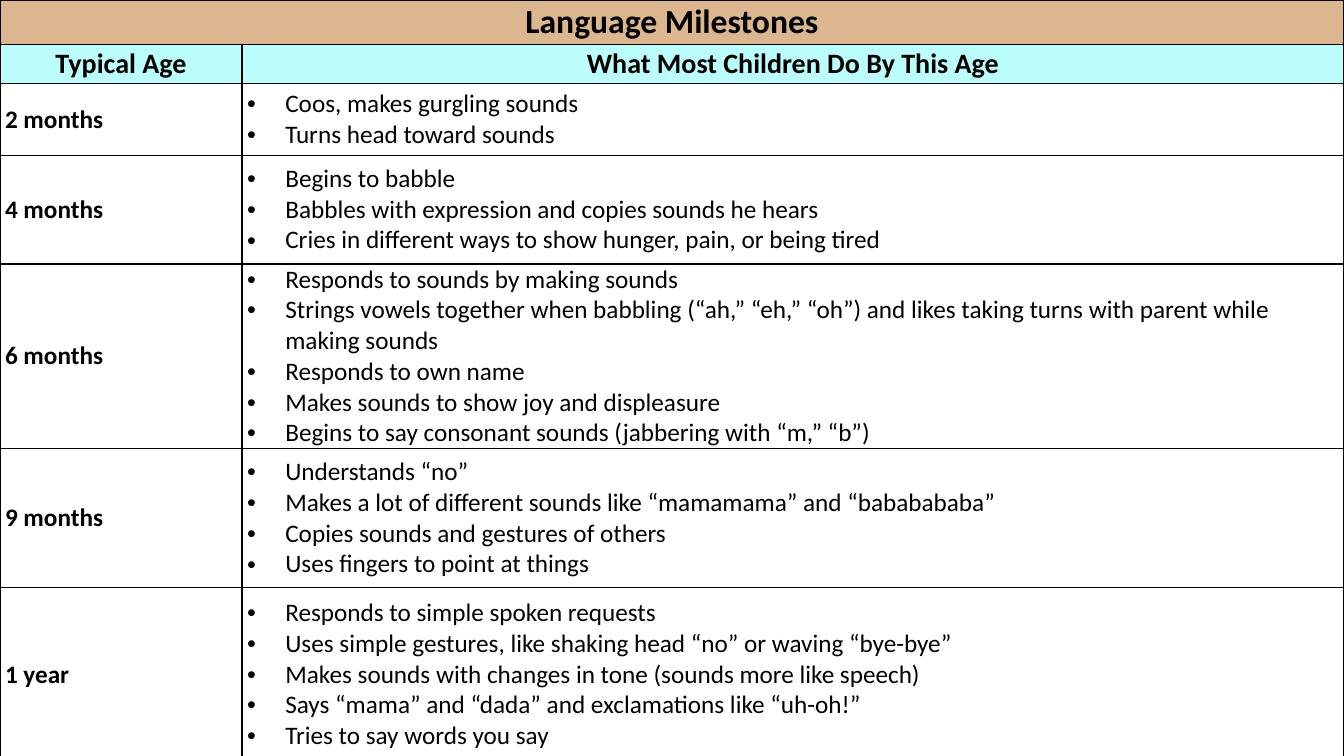
import pptx
import pptx.dml.color
import pptx.enum.text
import pptx.oxml
import pptx.oxml.ns
import pptx.util
from pptx.util import Inches

COLOURS = {"title": "DBB68F", "heading": "BBFDFB", "ink": "000000"}
FONT = "Calibri"
COLUMN_WIDTHS = [2.4, 10.93]
ROW_HEIGHTS = [0.44, 0.39, 0.71, 1.08, 1.77, 1.38, 1.72]

TITLE = "Language Milestones"
HEADINGS = ["Typical Age", "What Most Children Do By This Age"]
MILESTONES = [
    ("2 months", ["Coos, makes gurgling sounds", "Turns head toward sounds"]),
    ("4 months", [
        "Begins to babble",
        "Babbles with expression and copies sounds he hears",
        "Cries in different ways to show hunger, pain, or being tired",
    ]),
    ("6 months", [
        "Responds to sounds by making sounds",
        "Strings vowels together when babbling (“ah,” “eh,” “oh”) "
        "and likes taking turns with parent while making sounds",
        "Responds to own name",
        "Makes sounds to show joy and displeasure",
        "Begins to say consonant sounds (jabbering with “m,” “b”)",
    ]),
    ("9 months", [
        "Understands “no”",
        "Makes a lot of different sounds like “mamamama” and “bababababa”",
        "Copies sounds and gestures of others",
        "Uses fingers to point at things",
    ]),
    ("1 year", [
        "Responds to simple spoken requests",
        "Uses simple gestures, like shaking head “no” or waving “bye-bye”",
        "Makes sounds with changes in tone (sounds more like speech)",
        "Says “mama” and “dada” and exclamations like “uh-oh!”",
        "Tries to say words you say",
    ]),
]


def rgb(name):
    return pptx.dml.color.RGBColor.from_string(COLOURS[name])


def style_cell(cell, fill=None):
    """Set margins, thin borders and fill of one cell."""
    cell.margin_left = cell.margin_right = Inches(0.05)
    cell.margin_top = cell.margin_bottom = Inches(0)
    cell.vertical_anchor = pptx.enum.text.MSO_ANCHOR.MIDDLE
    properties = cell._tc.get_or_add_tcPr()
    for side in ("lnL", "lnR", "lnT", "lnB"):
        properties.append(pptx.oxml.parse_xml(
            f'<a:{side} {pptx.oxml.ns.nsdecls("a")} w="{pptx.util.Pt(1)}">'
            f'<a:solidFill><a:srgbClr val="{COLOURS["ink"]}"/></a:solidFill>'
            f'</a:{side}>'))
    if fill:
        cell.fill.solid()
        cell.fill.fore_color.rgb = rgb(fill)
    else:
        cell.fill.background()


def format_spans(para, size, bold):
    for span in para.runs:
        span.font.name = FONT
        span.font.size = pptx.util.Pt(size)
        span.font.bold = bold
        span.font.color.rgb = rgb("ink")


def write_label(cell, text, size, centred=False):
    """Write one bold line, for titles, headings and ages."""
    cell.text_frame.text = text
    para = cell.text_frame.paragraphs[0]
    para.space_after = pptx.util.Pt(10)
    if centred:
        para.alignment = pptx.enum.text.PP_ALIGN.CENTER
    format_spans(para, size, True)


def write_bullets(cell, items):
    cell.text_frame.text = "\n".join(items)
    for para in cell.text_frame.paragraphs:
        properties = para._p.get_or_add_pPr()
        properties.set("marL", str(Inches(0.38)))
        properties.set("indent", str(-Inches(0.38)))
        for bullet in ('buFont {} typeface="Arial"', 'buChar {} char="•"'):
            tag = bullet.format(pptx.oxml.ns.nsdecls("a"))
            properties.append(pptx.oxml.parse_xml(f"<a:{tag}/>"))
        format_spans(para, 18, False)


def add_grid(page):
    """Add the empty table with its column widths and row heights."""
    grid = page.shapes.add_table(
        len(ROW_HEIGHTS), len(COLUMN_WIDTHS), Inches(0), Inches(0),
        Inches(sum(COLUMN_WIDTHS)), Inches(sum(ROW_HEIGHTS))).table
    grid.first_row = grid.horz_banding = False
    for column, width in zip(grid.columns, COLUMN_WIDTHS):
        column.width = Inches(width)
    for row, height in zip(grid.rows, ROW_HEIGHTS):
        row.height = Inches(height)
    for row, fill in zip(grid.rows, ["title", "heading"] + [None] * len(MILESTONES)):
        for cell in row.cells:
            style_cell(cell, fill)
    return grid


def main():
    deck = pptx.Presentation()
    deck.slide_width, deck.slide_height = Inches(13.33), Inches(7.5)
    page = deck.slides.add_slide(deck.slide_layouts[6])
    grid = add_grid(page)

    # Title and column headings
    grid.cell(0, 0).merge(grid.cell(0, 1))
    write_label(grid.cell(0, 0), TITLE, 24, centred=True)
    for column, heading in enumerate(HEADINGS):
        write_label(grid.cell(1, column), heading, 20, centred=True)

    # One row for each age
    for row, (age, skills) in enumerate(MILESTONES, start=2):
        write_label(grid.cell(row, 0), age, 18)
        write_bullets(grid.cell(row, 1), skills)

    deck.save("out.pptx")


if __name__ == "__main__":
    main()
